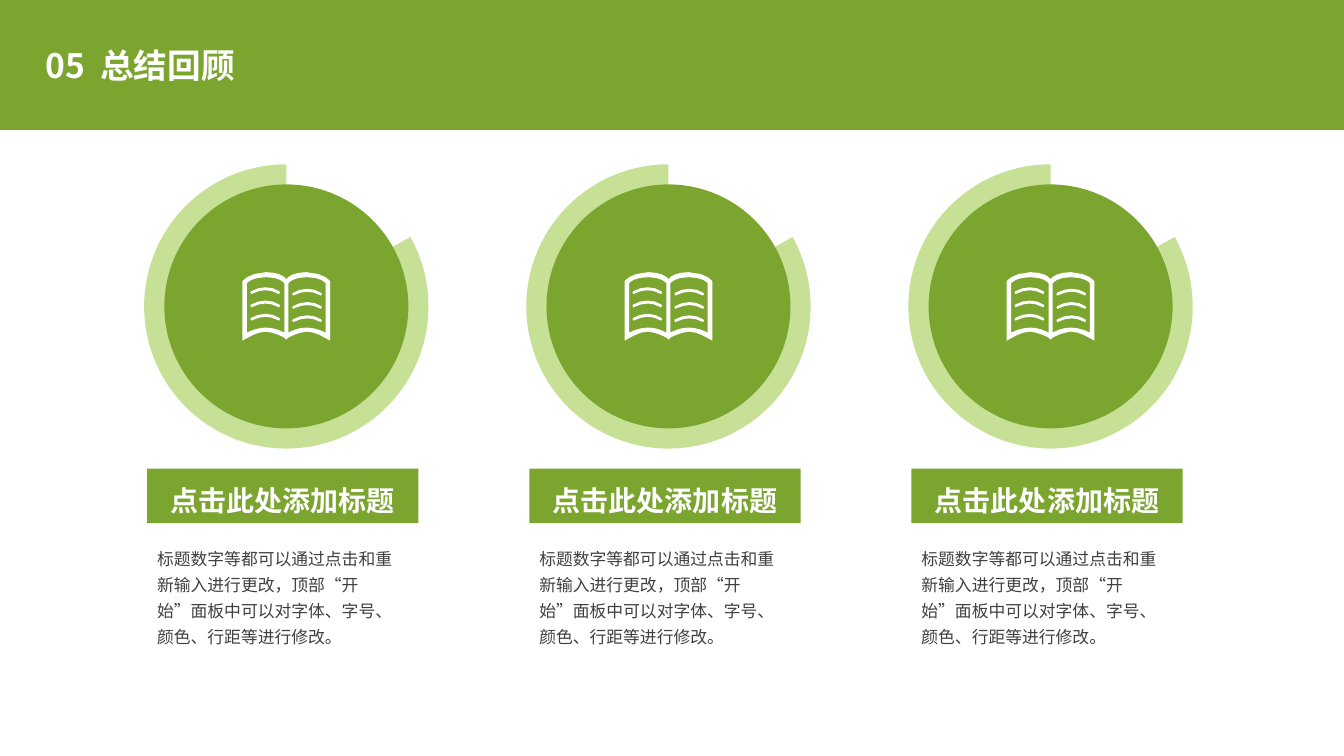
from lxml import etree
from pptx import Presentation
from pptx.dml.color import RGBColor
from pptx.enum.shapes import MSO_SHAPE
from pptx.enum.text import MSO_ANCHOR, MSO_AUTO_SIZE, PP_ALIGN
from pptx.oxml.ns import qn
from pptx.util import Inches, Pt

# Content
TITLE_NUMBER, TITLE_TEXT = "05", "总结回顾"
BODY = "标题数字等都可以通过点击和重新输入进行更改，顶部“开始”面板中可以对字体、字号、颜色、行距等进行修改。"
CARDS = [("点击此处添加标题", BODY)] * 3

# Style
FONT = "Noto Sans CJK SC"
GREEN = RGBColor(0x7B, 0xA5, 0x2F)
LIGHT_GREEN = RGBColor(0xC6, 0xE1, 0x95)
WHITE = RGBColor(0xFF, 0xFF, 0xFF)
DARK = RGBColor(0x40, 0x40, 0x40)
RECT, PIE, OVAL = MSO_SHAPE.RECTANGLE, MSO_SHAPE.PIE, MSO_SHAPE.OVAL
LEFT, CENTER = PP_ALIGN.LEFT, PP_ALIGN.CENTER
TOP, MIDDLE = MSO_ANCHOR.TOP, MSO_ANCHOR.MIDDLE

# Layout in inches
SLIDE_W, SLIDE_H = 13.33, 7.5
BAND_H = 1.29
FIRST_CENTER, COLUMN_STEP = 2.84, 3.79
CIRCLE_Y = 3.04
RING_D, DISC_D = 2.82, 2.42
CARD_OFFSET, CARD_W = -1.38, 2.69
HEADING_Y, HEADING_H = 4.65, 0.54
BODY_Y, BODY_H = 5.33, 1.15
BOOK_Y = 2.7

# Book icon in 1/100 inch from the top of the spine:
# a pair is a line end, six numbers are a Bezier curve
COVER_HALF = [(0, 7), (2, 4, 8, 0, 20, 0), (39, 1, 43, 9, 43.5, 9),
              (43.5, 68), (40, 66), (39, 66, 30, 59, 20, 59),
              (11, 60, 4, 64, 2, 65), (0, 67)]
PAGE = [(39, 60), (35, 58, 28, 55, 20, 55), (12, 55, 6, 58, 2, 60),
        (2, 11), (3, 10, 7, 5, 20, 5), (34, 5, 38, 10, 39, 11)]
TEXT_LINE = [(-35, 19), (-26, 13.7, -15, 13.7, -7, 19), (-6.3, 20.3),
             (-7.3, 21.7), (-9, 21), (-16, 17, -25, 17, -33, 21),
             (-34.7, 21.7), (-35.7, 20.3)]
LINE_STEP, LINE_ROWS = 13.2, 3
LINE_SIDES = [(0, 0), (41.5, 1.5)]


def flatten(path, steps=4):
    """Turn lines and Bezier curves into a list of points."""
    points = [path[0]]
    for seg in path[1:]:
        if len(seg) == 2:
            points.append(seg)
            continue
        ctrl = [points[-1], seg[:2], seg[2:4], seg[4:]]
        for n in range(1, steps + 1):
            t = n / steps
            weights = ((1 - t) ** 3, 3 * t * (1 - t) ** 2,
                       3 * t * t * (1 - t), t ** 3)
            points.append(tuple(sum(w * c[k] for w, c in zip(weights, ctrl))
                                for k in (0, 1)))
    return points


def mirror(points):
    return [(-x, y) for x, y in reversed(points)]


def paint(sp, color):
    sp.shadow.inherit = False
    sp.fill.solid()
    sp.fill.fore_color.rgb = color
    sp.line.fill.background()
    return sp


def add_block(shape, color, x, y, w, h):
    return paint(slide.shapes.add_shape(
        shape, Inches(x), Inches(y), Inches(w), Inches(h)), color)


def add_circle(shape, color, cx, d):
    return add_block(shape, color, cx - d / 2, CIRCLE_Y - d / 2, d, d)


def add_outline(contours, cx):
    placed = [[(Inches(cx + x / 100), Inches(BOOK_Y + y / 100)) for x, y in c]
              for c in contours]
    builder = slide.shapes.build_freeform(*placed[0][0])
    builder.add_line_segments(placed[0][1:])
    for points in placed[1:]:
        builder.move_to(*points[0])
        builder.add_line_segments(points[1:])
    paint(builder.convert_to_shape(), WHITE)


def write(sp, runs, size, color, bold, align, anchor, spacing):
    tf = sp.text_frame
    tf.word_wrap = True
    tf.auto_size = MSO_AUTO_SIZE.NONE
    tf.vertical_anchor = anchor
    p = tf.paragraphs[0]
    for text in runs:
        p.add_run().text = text
    p.alignment, p.line_spacing = align, spacing
    p.font.name, p.font.size, p.font.bold = FONT, Pt(size), bold
    p.font.color.rgb = color
    # East Asian typeface
    latin = p._p.pPr.find(qn("a:defRPr")).find(qn("a:latin"))
    ea = etree.Element(qn("a:ea"), typeface=FONT)
    latin.addnext(ea)
    return p


prs = Presentation()
prs.slide_width, prs.slide_height = Inches(SLIDE_W), Inches(SLIDE_H)
slide = prs.slides.add_slide(prs.slide_layouts[5])

# Green background with the white content area
slide.background.fill.solid()
slide.background.fill.fore_color.rgb = GREEN
add_block(RECT, WHITE, 0, BAND_H, SLIDE_W, SLIDE_H - BAND_H)

# Title, with a widened space after the number
title = slide.shapes.title
title.left, title.top = Inches(0.35), Inches(0.28)
title.width, title.height = Inches(5.8), Inches(0.79)
p = write(title, [TITLE_NUMBER, " ", TITLE_TEXT], 24, WHITE, True,
          LEFT, MIDDLE, 0.9)
p.runs[1]._r.get_or_add_rPr().set("spc", "540")

# Icon and text columns
cover = flatten(COVER_HALF)
page = flatten(PAGE)
text_line = flatten(TEXT_LINE)
for col, (heading, body) in enumerate(CARDS):
    cx = FIRST_CENTER + col * COLUMN_STEP
    ring = add_circle(PIE, LIGHT_GREEN, cx, RING_D)
    ring.adjustments[0], ring.adjustments[1] = 198.46, 162
    add_circle(OVAL, GREEN, cx, DISC_D)

    # Open book with lines of writing
    add_outline([cover + mirror(cover), page[::-1], mirror(page[::-1])], cx)
    for dx, dy in LINE_SIDES:
        for row in range(LINE_ROWS):
            add_outline([[(x + dx, y + dy + row * LINE_STEP)
                          for x, y in text_line]], cx)

    # Body text and heading
    x = cx + CARD_OFFSET
    box = slide.shapes.add_textbox(Inches(x), Inches(BODY_Y),
                                   Inches(CARD_W), Inches(BODY_H))
    write(box, [body], 12, DARK, False, LEFT, TOP, 1.3)
    bar = add_block(RECT, GREEN, x, HEADING_Y, CARD_W, HEADING_H)
    write(bar, [heading], 20, WHITE, True, CENTER, TOP, 1.3)

prs.save("out.pptx")
